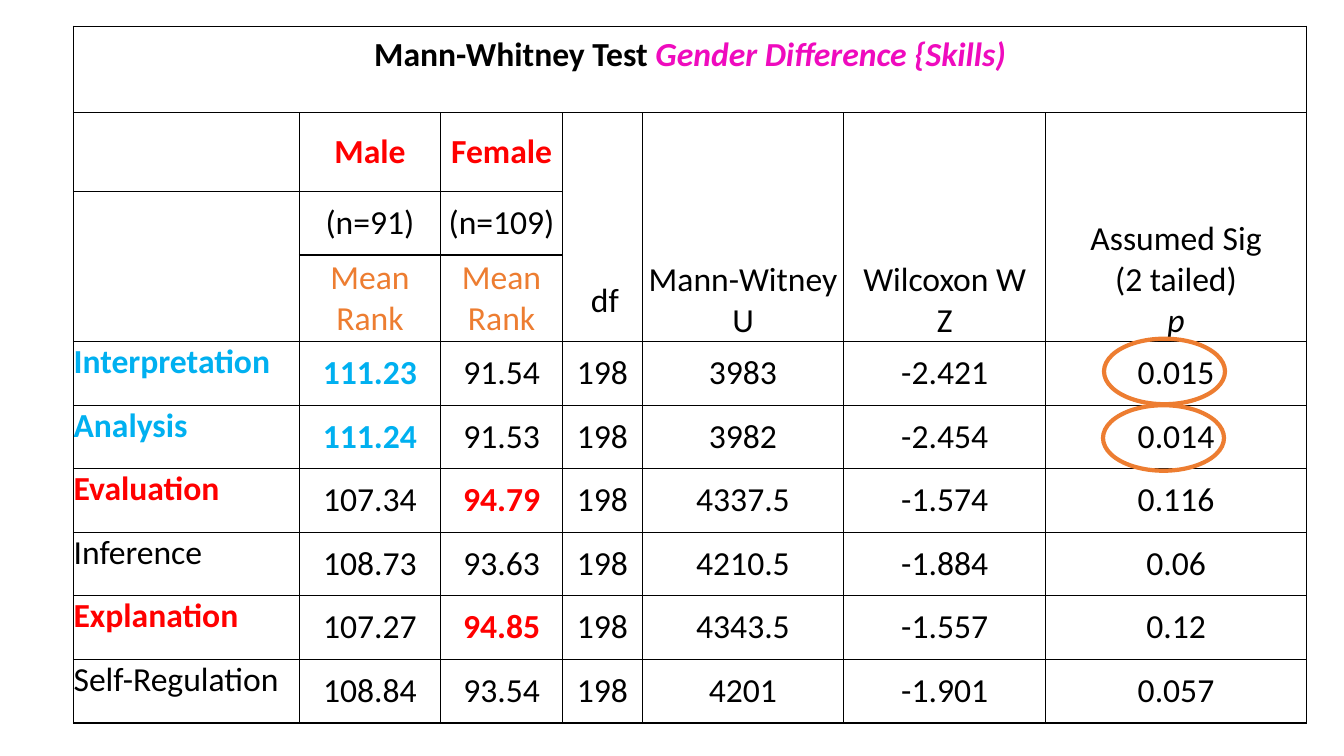
from dataclasses import dataclass

from lxml.etree import SubElement
from pptx import Presentation
from pptx.dml.color import RGBColor
from pptx.enum.shapes import MSO_SHAPE
from pptx.enum.text import MSO_ANCHOR, PP_ALIGN
from pptx.oxml.ns import qn
from pptx.util import Inches, Pt


@dataclass(frozen=True)
class Theme:
    font: str = "Calibri"
    size: int = 24
    black: str = "000000"
    white: str = "FFFFFF"
    red: str = "FF0000"
    blue: str = "00B0F0"
    orange: str = "ED7D31"
    magenta: str = "EF0BBE"
    border: float = 1
    bottom_border: float = 1.5
    ring: float = 3


THEME = Theme()
COLUMNS = [2.24, 1.4, 1.21, 0.79, 2, 2, 2.59]
HEADER_ROWS = [0.86, 0.78, 0.63, 0.86]
SKILL_ROW = 0.63
MALE, FEMALE = 1, 2

# Each skill: its values, the column of the highlighted rank, its colour
SKILLS = [
    (["Interpretation", "111.23", "91.54", "198", "3983", "-2.421", "0.015"], MALE, THEME.blue),
    (["Analysis", "111.24", "91.53", "198", "3982", "-2.454", "0.014"], MALE, THEME.blue),
    (["Evaluation", "107.34", "94.79", "198", "4337.5", "-1.574", "0.116"], FEMALE, THEME.red),
    (["Inference", "108.73", "93.63", "198", "4210.5", "-1.884", "0.06"], None, None),
    (["Explanation", "107.27", "94.85", "198", "4343.5", "-1.557", "0.12"], FEMALE, THEME.red),
    (["Self-Regulation", "108.84", "93.54", "198", "4201", "-1.901", "0.057"], None, None),
]


def rgb(value):
    return RGBColor.from_string(value)


def set_borders(cell, bottom):
    tc_pr = cell._tc.get_or_add_tcPr()
    for side, width in zip("LRTB", [THEME.border] * 3 + [bottom]):
        line = SubElement(tc_pr, qn(f"a:ln{side}"), w=str(Pt(width)))
        fill = SubElement(line, qn("a:solidFill"))
        SubElement(fill, qn("a:srgbClr"), val=THEME.black)


def write(cell, text, color=THEME.black, bold=False,
          align=PP_ALIGN.CENTER, anchor=MSO_ANCHOR.MIDDLE):
    cell.text = text
    cell.vertical_anchor = anchor
    for p in cell.text_frame.paragraphs:
        p.alignment = align
        p.font.name = THEME.font
        p.font.size = Pt(THEME.size)
        p.font.bold = bold
        p.font.color.rgb = rgb(color)


def add_grid(s):
    """Add the empty bordered table, with no style banding."""
    rows = HEADER_ROWS + [SKILL_ROW] * len(SKILLS)
    table = s.shapes.add_table(len(rows), len(COLUMNS), Inches(0.73), Inches(0.26),
                               Inches(sum(COLUMNS)), Inches(sum(rows))).table
    table.first_row = table.horz_banding = False
    for column, width in zip(table.columns, COLUMNS):
        column.width = Inches(width)
    for i, height in enumerate(rows):
        table.rows[i].height = Inches(height)
        last = i == len(rows) - 1
        for cell in table.rows[i].cells:
            set_borders(cell, THEME.bottom_border if last else THEME.border)
            cell.fill.solid()
            cell.fill.fore_color.rgb = rgb(THEME.white)
            cell.margin_left = cell.margin_right = 0
            cell.margin_top = cell.margin_bottom = 0
    return table


def fill_title(table):
    cell = table.cell(0, 0)
    cell.merge(table.cell(0, len(COLUMNS) - 1))
    write(cell, "Mann-Whitney Test ", bold=True, anchor=MSO_ANCHOR.TOP)
    cell.margin_top = Inches(0.08)
    r = cell.text_frame.paragraphs[0].add_run()
    r.text = "Gender Difference {Skills)"
    r.font.italic = True
    r.font.color.rgb = rgb(THEME.magenta)


def fill_headings(table):
    table.cell(2, 0).merge(table.cell(3, 0))
    for col, gender, count in [(MALE, "Male", 91), (FEMALE, "Female", 109)]:
        write(table.cell(1, col), gender, THEME.red, bold=True)
        write(table.cell(2, col), f"(n={count})")
        write(table.cell(3, col), "Mean Rank", THEME.orange)

    statistics = ["df", "Mann-Witney\vU", "Wilcoxon W\vZ", "Assumed Sig\n(2 tailed)\np"]
    for col, text in enumerate(statistics, start=3):
        cell = table.cell(1, col)
        cell.merge(table.cell(3, col))
        write(cell, text, anchor=MSO_ANCHOR.BOTTOM)
    table.cell(1, 3).margin_bottom = Inches(0.2)
    table.cell(1, 3).margin_left = Inches(0.05)
    table.cell(1, 6).text_frame.paragraphs[-1].font.italic = True


def fill_skills(table):
    for row, (values, highlight, color) in enumerate(SKILLS, start=len(HEADER_ROWS)):
        for col, text in enumerate(values):
            marked = highlight is not None and col in (0, highlight)
            write(table.cell(row, col), text, color if marked else THEME.black, marked,
                  PP_ALIGN.CENTER if col else PP_ALIGN.LEFT,
                  MSO_ANCHOR.MIDDLE if col else MSO_ANCHOR.TOP)


def add_ring(s, left, top):
    ring = s.shapes.add_shape(MSO_SHAPE.OVAL, Inches(left), Inches(top),
                              Inches(1.2), Inches(0.65))
    ring.shadow.inherit = False
    ring.fill.background()
    ring.line.color.rgb = rgb(THEME.orange)
    ring.line.width = Pt(THEME.ring)


def main():
    prs = Presentation()
    prs.slide_width, prs.slide_height = Inches(13.33), Inches(7.5)
    s = prs.slides.add_slide(prs.slide_layouts[6])
    table = add_grid(s)
    fill_title(table)
    fill_headings(table)
    fill_skills(table)
    add_ring(s, 10.95, 3.36)
    add_ring(s, 10.94, 4.02)
    prs.save("out.pptx")


if __name__ == "__main__":
    main()
